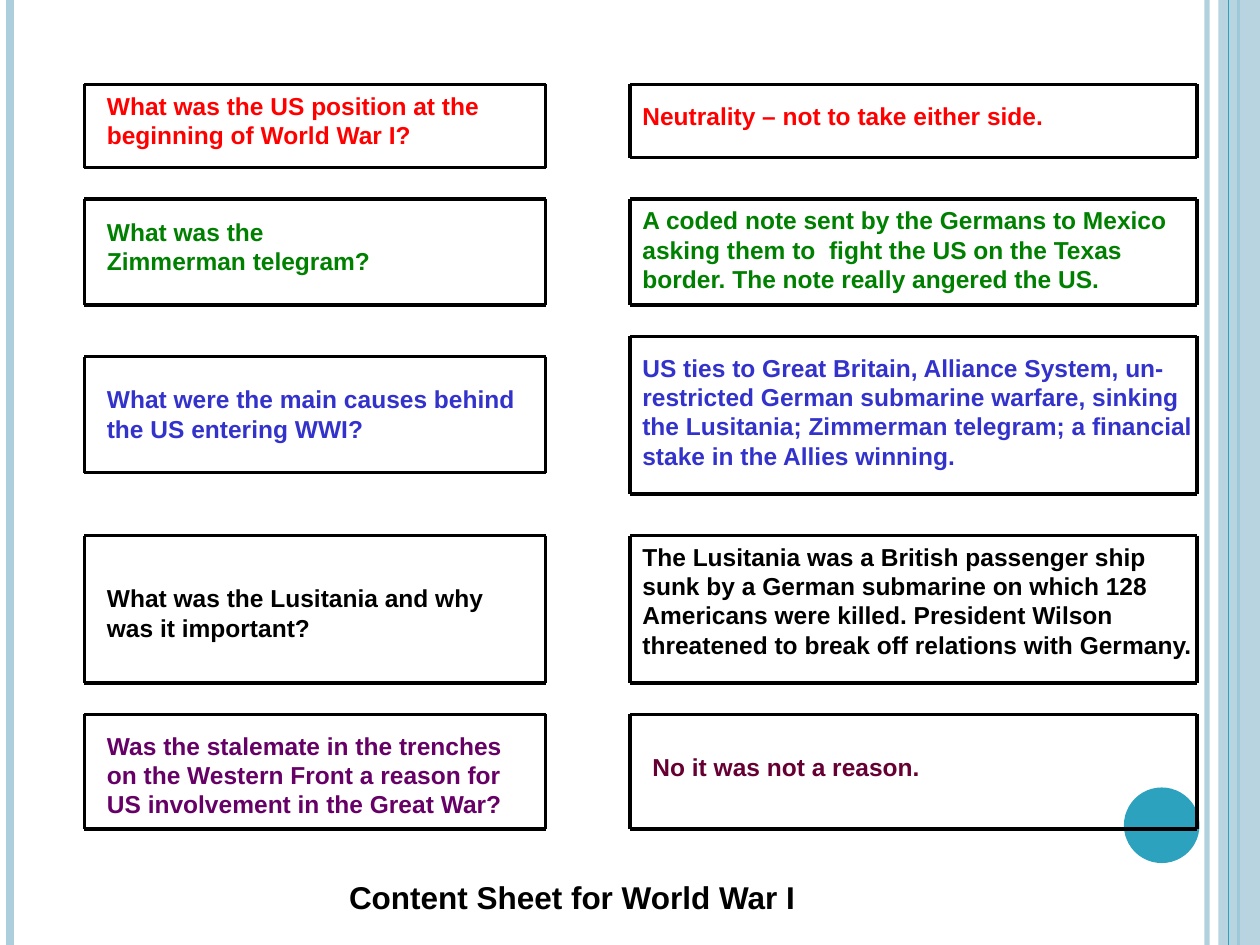
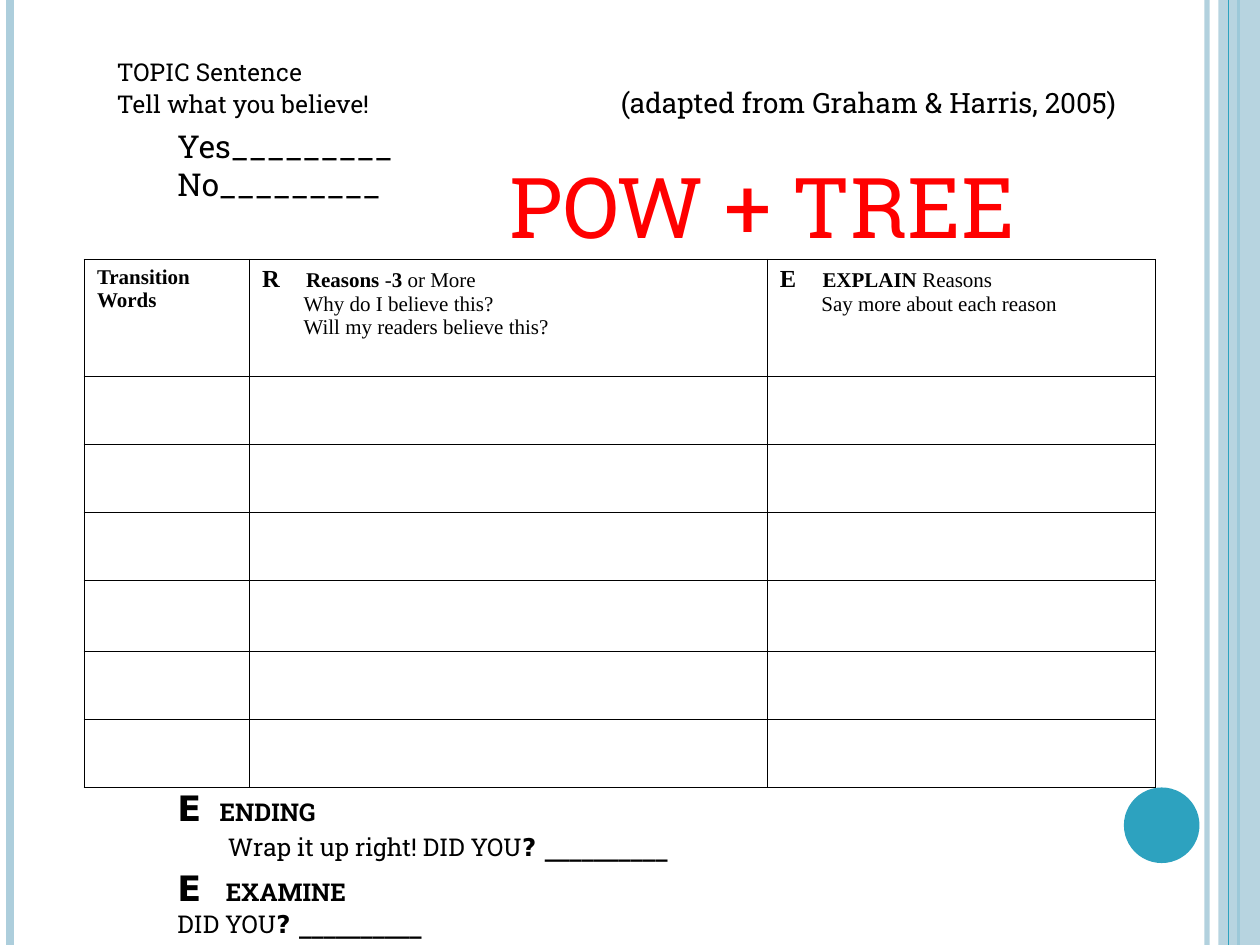
from dataclasses import dataclass

from pptx import Presentation
from pptx.dml.color import RGBColor
from pptx.enum.shapes import MSO_CONNECTOR, MSO_SHAPE
from pptx.enum.text import MSO_ANCHOR, MSO_AUTO_SIZE, PP_ALIGN
from pptx.oxml.ns import qn
from pptx.util import Inches, Pt
from lxml import etree

STRAIGHT = MSO_CONNECTOR.STRAIGHT
RECTANGLE, OVAL = MSO_SHAPE.RECTANGLE, MSO_SHAPE.OVAL
TOP, MIDDLE = MSO_ANCHOR.TOP, MSO_ANCHOR.MIDDLE
NO_AUTOSIZE = MSO_AUTO_SIZE.NONE
LEFT = PP_ALIGN.LEFT

BLACK = RGBColor(0x00, 0x00, 0x00)
WHITE = RGBColor(0xFF, 0xFF, 0xFF)
RED = RGBColor(0xFF, 0x00, 0x00)
GREEN = RGBColor(0x00, 0x80, 0x00)
BLUE = RGBColor(0x33, 0x33, 0xCC)
PURPLE = RGBColor(0x66, 0x00, 0x66)
MAROON = RGBColor(0x66, 0x00, 0x33)
PALE_BLUE = RGBColor(0xAD, 0xCE, 0xDC)
TEAL = RGBColor(0x2D, 0xA2, 0xBF)

SANS, SLAB, MARK, SERIF = "Arial", "Roboto Slab", "DejaVu Sans", "Times New Roman"
TITLE_ONLY = 5
WIDTH, HEIGHT = 10, 7.5


@dataclass
class Span:
    """A run of text; tracking is extra space after each letter, in points."""
    text: str
    font: str
    size: float
    bold: bool = False
    color: RGBColor = BLACK
    tracking: float = 0


@dataclass
class Line:
    """One paragraph; indent is in inches, before is in points."""
    spans: list
    indent: float = 0
    before: float = 0


def inches(*lengths):
    return [Inches(length) for length in lengths]


def set_opacity(fill, percent):
    color = fill._xPr.find(qn("a:solidFill"))[0]
    etree.SubElement(color, qn("a:alpha"), val=str(percent * 1000))


def write(frame, lines):
    for index, line in enumerate(lines):
        para = frame.paragraphs[0] if index == 0 else frame.add_paragraph()
        para.alignment = LEFT
        para.space_before = Pt(line.before)
        properties = para._p.get_or_add_pPr()
        properties.set("marL", str(Inches(line.indent)))
        properties.set("indent", "0")
        for span in line.spans:
            run = para.add_run()
            run.text = span.text
            run.font.name = span.font
            run.font.size = Pt(span.size)
            run.font.bold = span.bold
            run.font.color.rgb = span.color
            if span.tracking:
                run.font._element.set("spc", str(int(span.tracking * 100)))


class SlideBuilder:
    def __init__(self, deck):
        self.deck = deck
        self.slide = None

    def start(self, title, at, fill=None):
        """Add a slide with its title and the shared side bands."""
        self.slide = self.deck.slides.add_slide(self.deck.slide_layouts[TITLE_ONLY])
        box = self.slide.shapes.title
        box.left, box.top, box.width, box.height = inches(*at)
        if fill is not None:
            box.fill.solid()
            box.fill.fore_color.rgb = fill
        self.prepare(box.text_frame, TOP)
        write(box.text_frame, [Line([title])])
        self.side_bands()

    def prepare(self, frame, anchor):
        frame.word_wrap = True
        frame.auto_size = NO_AUTOSIZE
        frame.vertical_anchor = anchor

    def side_bands(self):
        self.vertical_band(9.58, PALE_BLUE, 3, 93)
        self.vertical_band(0.08, PALE_BLUE, 4.5)
        self.vertical_band(9.83, TEAL, 1.5)
        self.shape(RECTANGLE, (9.67, 0, 0.33, HEIGHT), PALE_BLUE, 87)
        self.vertical_band(9.75, TEAL, 0.75)
        self.shape(OVAL, (8.92, 6.25, 0.6, 0.6), TEAL)

    def vertical_band(self, x, color, weight, opacity=100):
        self.line((x, 0, x, HEIGHT), color, weight, opacity)

    def line(self, ends, color, weight, opacity=100):
        line = self.slide.shapes.add_connector(STRAIGHT, *inches(*ends))
        line.line.color.rgb = color
        line.line.width = Pt(weight)
        if opacity < 100:
            set_opacity(line.line.fill, opacity)
        etree.SubElement(line._element.spPr, qn("a:effectLst"))

    def shape(self, kind, at, fill, opacity=100):
        shape = self.slide.shapes.add_shape(kind, *inches(*at))
        shape.shadow.inherit = False
        shape.fill.solid()
        shape.fill.fore_color.rgb = fill
        if opacity < 100:
            set_opacity(shape.fill, opacity)
        shape.line.fill.background()

    def text(self, at, lines, anchor=TOP):
        box = self.slide.shapes.add_textbox(*inches(*at))
        self.prepare(box.text_frame, anchor)
        write(box.text_frame, lines)

    def frame(self, left, right, top, bottom):
        """Rule the four sides of a frame."""
        for y in (top, bottom):
            self.line((left, y, right, y), BLACK, 2)
        for x in (left, right):
            self.line((x, top, x, bottom), BLACK, 2)

    def table(self, at, columns, rows, headers):
        area = (*at, sum(columns), sum(rows))
        table = self.slide.shapes.add_table(len(rows), len(columns), *inches(*area)).table
        table.first_row = table.horz_banding = False
        for column, width in zip(table.columns, columns):
            column.width = Inches(width)
        for row, height in zip(table.rows, rows):
            row.height = Inches(height)
        for cell in table.iter_cells():
            self.border(cell)
            cell.fill.background()
        for cell, lines in zip(table.rows[0].cells, headers):
            write(cell.text_frame, lines)

    def border(self, cell):
        properties = cell._tc.get_or_add_tcPr()
        for side in ("a:lnL", "a:lnR", "a:lnT", "a:lnB"):
            edge = etree.SubElement(properties, qn(side), w=str(Pt(1)))
            fill = etree.SubElement(edge, qn("a:solidFill"))
            etree.SubElement(fill, qn("a:srgbClr"), val=str(BLACK))


def content_sheet(page):
    page.start(Span("Content Sheet for World War I", SANS, 18, True), (2.67, 6.92, 4.58, 0.4))
    # Each entry: frame top and bottom, text box, colour, paragraphs
    questions = [
        (0.67, 1.33, (0.75, 0.67, 3.17, 0.57), RED,
         "What was the US position at the beginning of World War I?"),
        (1.58, 2.42, (0.75, 1.67, 2.58, 0.57), GREEN, "What was the Zimmerman telegram?"),
        (2.83, 3.75, (0.75, 3, 3.5, 0.57), BLUE,
         "What were the main causes behind the US entering WWI?"),
        (4.25, 5.42, (0.75, 4.58, 3.25, 0.57), BLACK,
         "What was the Lusitania and why was it important?"),
        (5.67, 6.58, (0.75, 5.75, 3.58, 0.8), PURPLE,
         "Was the stalemate in the trenches on the Western Front a reason for "
         "US involvement in the Great War?"),
    ]
    answers = [
        (0.67, 1.25, (5, 0.75, 4, 0.33), RED, "Neutrality – not to take either side."),
        (1.58, 2.42, (5, 1.58, 4.58, 0.8), GREEN,
         "A coded note sent by the Germans to Mexico asking them to  fight the US on "
         "the Texas border. The note really angered the US."),
        (2.67, 3.92, (5, 2.75, 5, 1.03), BLUE,
         "US ties to Great Britain, Alliance System, un-restricted German submarine "
         "warfare, sinking",
         "the Lusitania; Zimmerman telegram; a financial stake in the Allies winning."),
        (4.25, 5.42, (5, 4.25, 4.58, 1.03), BLACK,
         "The Lusitania was a British passenger ship sunk by a German submarine on "
         "which 128 Americans were killed. President Wilson threatened to break off "
         "relations with Germany."),
        (5.67, 6.58, (5.08, 5.92, 2.83, 0.33), MAROON, "No it was not a reason."),
    ]
    for left, right, cards in ((0.67, 4.33, questions), (5, 9.5, answers)):
        for top, bottom, text_at, color, *texts in cards:
            page.text(text_at, [Line([Span(text, SANS, 14, True, color)]) for text in texts])
            page.frame(left, right, top, bottom)


def pow_tree(page):
    page.start(Span("POW + TREE", SLAB, 48, color=RED), (3.94, 1.18, 4.75, 1), WHITE)
    page.text((0.83, 0.4, 8.62, 0.7), [
        Line([Span("TOPIC Sentence", SLAB, 14)]),
        Line([Span("Tell what you believe!\t\t\t\t", SLAB, 14),
              Span("(adapted from Graham & Harris, 2005)", SLAB, 16)]),
    ])
    page.text((1.31, 0.96, 2.5, 0.75), [
        Line([Span(f"{answer}_________", SLAB, 18)]) for answer in ("Yes", "No")
    ])

    def header(text, bold=False, size=12):
        return Span(text, SERIF, size, bold)

    gap = Span(" ", SERIF, 12, tracking=12)
    page.table((0.67, 2.06), (1.31, 4.11, 3.08), (0.93, 0.54, 0.54, 0.54, 0.56, 0.54, 0.54), [
        [Line([header(word, True)]) for word in ("Transition", "Words")],
        [Line([header("R", True, 14), gap, header("Reasons", True), header(" -"),
               header("3", True), header(" or More")]),
         Line([header("Why do I believe this?")], indent=0.33),
         Line([header("Will my readers believe this?")], indent=0.33)],
        [Line([header("E", True, 14), gap, header("EXPLAIN ", True), header("Reasons")]),
         Line([header("Say more about each reason")], indent=0.33)],
    ])

    blank = Span("? __________", MARK, 14, True)
    page.text((1.31, 6.23, 4.3, 1.23), [
        Line([Span("E ", MARK, 20, True), Span(" ENDING", SLAB, 14, True)]),
        Line([Span("Wrap it up right! DID YOU", SLAB, 14), blank], indent=0.4, before=2),
        Line([Span("E  ", MARK, 20, True), Span("EXAMINE", SLAB, 14, True)], before=3),
        Line([Span("DID YOU", SLAB, 14), blank]),
    ], MIDDLE)


def main():
    deck = Presentation()
    deck.slide_width, deck.slide_height = inches(WIDTH, HEIGHT)
    page = SlideBuilder(deck)
    content_sheet(page)
    pow_tree(page)
    deck.save("out.pptx")


if __name__ == "__main__":
    main()
